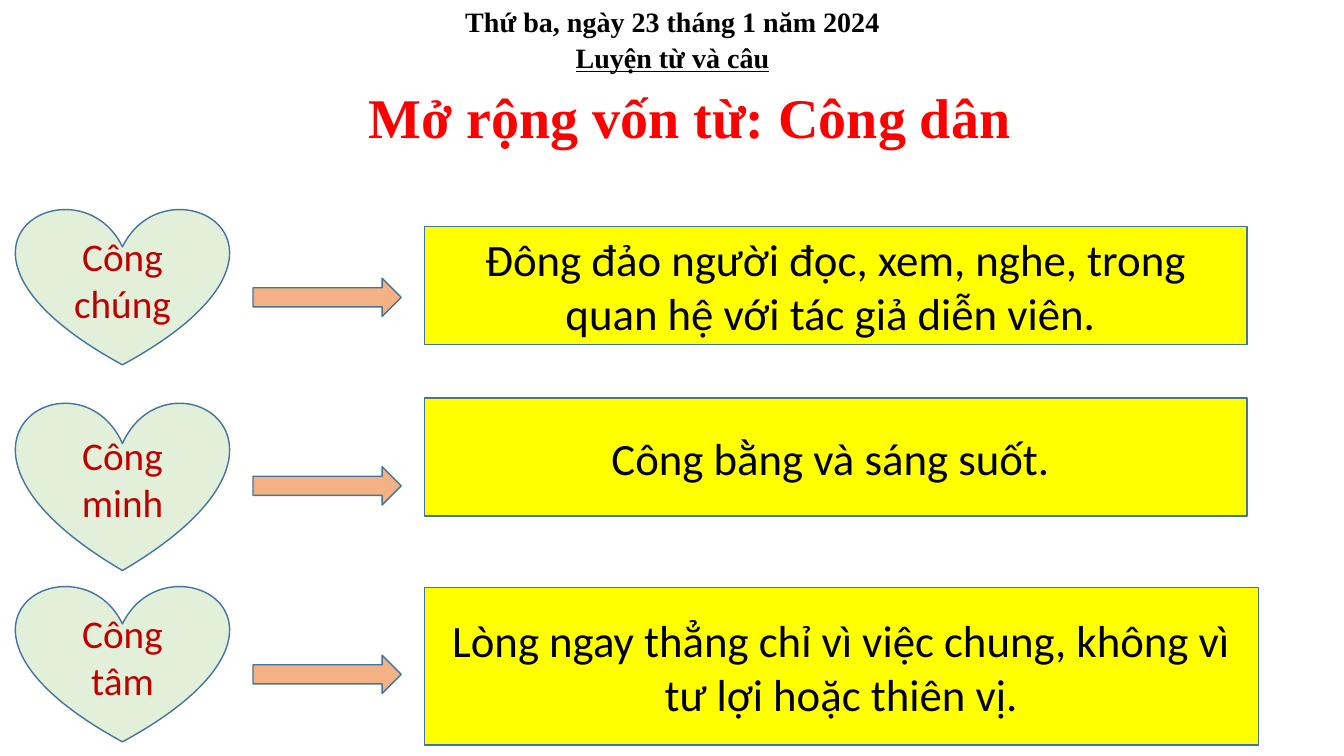
from pptx import Presentation, util as u
from pptx.dml.color import RGBColor
from pptx.enum import shapes, text

PX = 9144  # EMU per px, 100 px to the inch

BLACK = RGBColor(0x00, 0x00, 0x00)
RED = RGBColor(0xFF, 0x00, 0x00)
DARK_RED = RGBColor(0xC0, 0x00, 0x00)
GREEN = RGBColor(0xE2, 0xF0, 0xD9)
ORANGE = RGBColor(0xF4, 0xB1, 0x83)
YELLOW = RGBColor(0xFF, 0xFF, 0x00)
BLUE = RGBColor(0x43, 0x73, 0x9E)

ARROW_TOP, ARROW_STEP = 276, 187

# word, meaning, heart top and height, meaning box top, width and height
WORDS = [
    ("Công chúng",
     "Đông đảo người đọc, xem, nghe, trong quan hệ với tác giả diễn viên. ",
     (206, 156), (225, 816, 117)),
    ("Công minh", "Công bằng và sáng suốt. ", (398, 168), (395, 816, 117)),
    ("Công tâm",
     "Lòng ngay thẳng chỉ vì việc chung, không vì tư lợi hoặc thiên vị.",
     (580, 156), (583, 827, 156)),
]


def px(*lengths):
    return [u.Emu(length * PX) for length in lengths]


def write(shape, words, font_name, size, color, anchor, bold=False, underline=False):
    frame = shape.text_frame
    frame.text = words
    frame.word_wrap = True
    frame.auto_size = text.MSO_AUTO_SIZE.NONE
    frame.vertical_anchor = anchor
    paragraph = frame.paragraphs[0]
    paragraph.alignment = text.PP_ALIGN.CENTER
    paragraph.line_spacing = 1.0
    font = paragraph.runs[0].font
    font.name, font.size, font.color.rgb = font_name, u.Pt(size), color
    font.bold, font.underline = bold, underline


def add_heading(slide, box, words, underline=False):
    shape = slide.shapes.add_textbox(*px(*box))
    write(shape, words, "Times New Roman", 20, BLACK, text.MSO_ANCHOR.TOP,
          bold=True, underline=underline)


def set_title(slide, box, words):
    title = slide.shapes.title
    title.left, title.top, title.width, title.height = px(*box)
    write(title, words, "Times New Roman", 40, RED, text.MSO_ANCHOR.TOP, bold=True)


def add_figure(slide, kind, box, fill):
    shape = slide.shapes.add_shape(kind, *px(*box))
    shape.shadow.inherit = False
    shape.fill.solid()
    shape.fill.fore_color.rgb = fill
    shape.line.color.rgb = BLUE
    shape.line.width = u.Pt(1)
    return shape


def add_word_row(slide, index, word, meaning, heart_span, meaning_span):
    kinds = shapes.MSO_SHAPE
    middle = text.MSO_ANCHOR.MIDDLE
    heart_top, heart_height = heart_span
    meaning_top, meaning_width, meaning_height = meaning_span

    heart = add_figure(slide, kinds.HEART, (16, heart_top, 211, heart_height), GREEN)
    write(heart, word, "Calibri", 28, DARK_RED, middle)

    arrow_top = ARROW_TOP + index * ARROW_STEP
    add_figure(slide, kinds.RIGHT_ARROW, (251, arrow_top, 147, 38), ORANGE)

    meaning_box = add_figure(
        slide, kinds.RECTANGLE, (421, meaning_top, meaning_width, meaning_height), YELLOW)
    write(meaning_box, meaning, "Calibri", 32, BLACK, middle)


def main():
    presentation = Presentation()
    presentation.slide_width, presentation.slide_height = px(1333, 750)
    slide = presentation.slides.add_slide(presentation.slide_layouts[5])

    # Date, subject and lesson title
    add_heading(slide, (167, 0, 1000, 44), "Thứ ba, ngày 23 tháng 1 năm 2024")
    add_heading(slide, (167, 35, 1000, 44), "Luyện từ và câu", underline=True)
    set_title(slide, (271, 77, 826, 77), "Mở rộng vốn từ: Công dân")

    # Words with their meanings
    for index, row in enumerate(WORDS):
        add_word_row(slide, index, *row)

    presentation.save("out.pptx")


if __name__ == "__main__":
    main()
